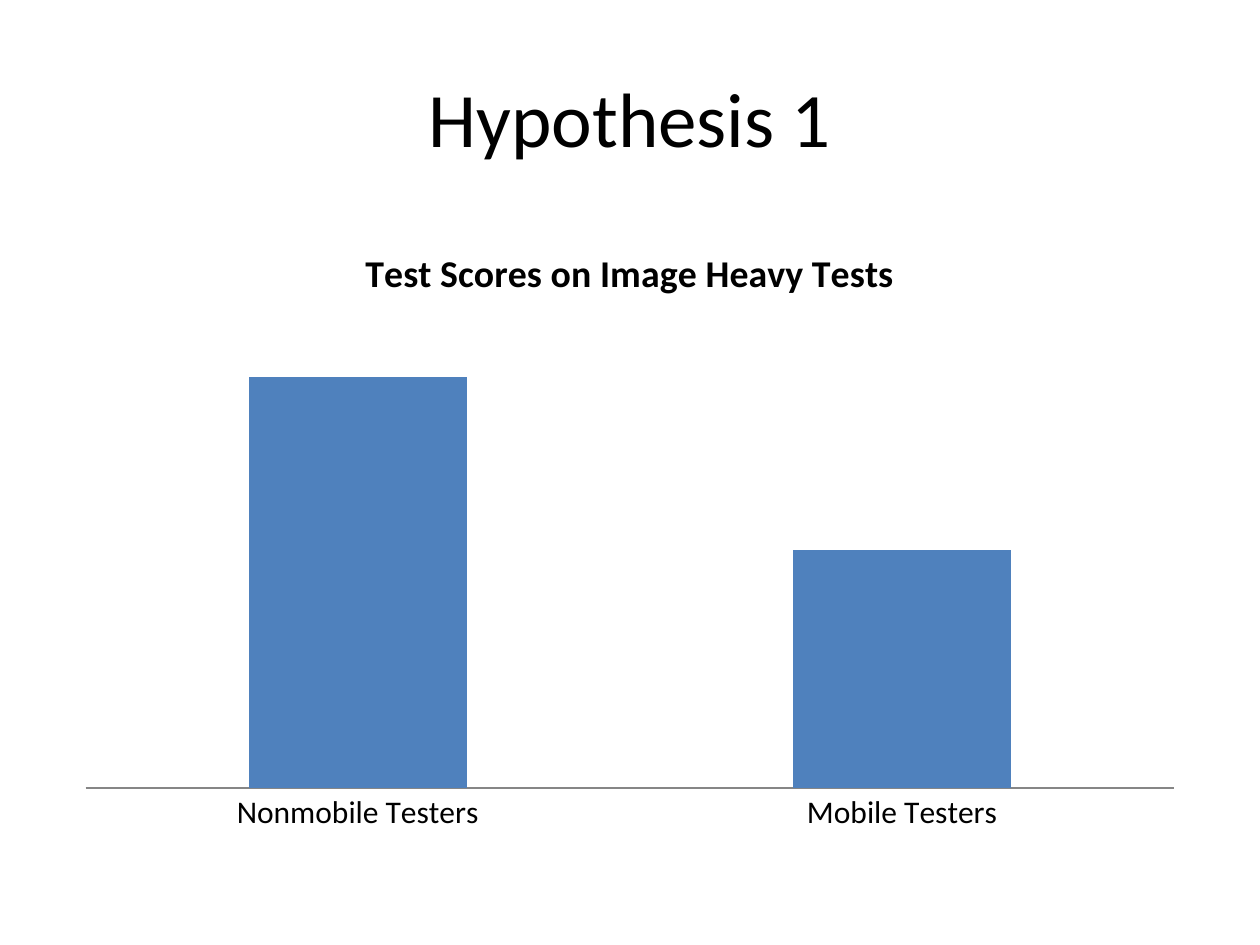
from lxml import etree
from pptx import Presentation
from pptx import util as u
from pptx.chart.data import CategoryChartData
from pptx.dml.color import RGBColor
from pptx.enum import chart as ch, text

PX = 9144  # 100 px to the inch
FONT = "Calibri"
COLORS = {"text": "000000", "bar": "4F81BD", "axis": "868686", "page": "FFFFFF"}
C_NS = "http://schemas.openxmlformats.org/drawingml/2006/chart"


def write(frame, content, size, bold=False, color="text"):
    paragraph = frame.paragraphs[0]
    paragraph.alignment = text.PP_ALIGN.CENTER
    run = paragraph.add_run()
    run.text = content
    run.font.name, run.font.size, run.font.bold = FONT, u.Pt(size), bold
    run.font.color.rgb = RGBColor.from_string(COLORS[color])


prs = Presentation()
prs.slide_width, prs.slide_height = 1000 * PX, 750 * PX
slide = prs.slides.add_slide(prs.slide_layouts[5])
slide.background.fill.solid()
slide.background.fill.fore_color.rgb = RGBColor.from_string(COLORS["page"])

# Heading
heading = slide.shapes.title
heading.left, heading.top, heading.width, heading.height = (
    n * PX for n in (50, 30, 900, 125))
heading.text_frame.vertical_anchor = text.MSO_ANCHOR.MIDDLE
write(heading.text_frame, "Hypothesis 1", size=44)

# Test scores chart
scores = CategoryChartData()
scores.categories = ["Nonmobile Testers", "Mobile Testers"]
scores.add_series("Series 1", (100, 58))
chart = slide.shapes.add_chart(
    ch.XL_CHART_TYPE.COLUMN_CLUSTERED,
    *(n * PX for n in (50, 175, 900, 495)), scores).chart
chart.has_legend = False
chart.font.name, chart.font.size = FONT, u.Pt(18)
chart.font.color.rgb = RGBColor.from_string(COLORS["text"])
write(chart.chart_title.text_frame, "Test Scores on Image Heavy Tests",
      size=21.6, bold=True)
chart.chart_title.include_in_layout = False

# Bars
bars = chart.plots[0]
bars.gap_width, bars.overlap, bars.vary_by_categories = 150, -25, False
bar_fill = bars.series[0].format.fill
bar_fill.solid()
bar_fill.fore_color.rgb = RGBColor.from_string(COLORS["bar"])

# Axes
testers = chart.category_axis
testers.major_tick_mark = testers.minor_tick_mark = ch.XL_TICK_MARK.NONE
testers.format.line.color.rgb = RGBColor.from_string(COLORS["axis"])
testers.format.line.width = u.Pt(0.75)
score_axis = chart.value_axis
score_axis.minimum_scale, score_axis.maximum_scale = 0, 120
score_axis.has_major_gridlines = False
score_axis.visible = False

# Inner plot area, as fractions of the chart
plot_area = chart.element.find(f".//{{{C_NS}}}plotArea")
for old_layout in plot_area.findall(f"{{{C_NS}}}layout"):
    plot_area.remove(old_layout)
layout = etree.Element(f"{{{C_NS}}}layout")
manual = etree.SubElement(layout, f"{{{C_NS}}}manualLayout")
for tag, value in (("layoutTarget", "inner"), ("xMode", "edge"), ("yMode", "edge"),
                   ("x", "0.02"), ("y", "0.12"), ("w", "0.96"), ("h", "0.79")):
    etree.SubElement(manual, f"{{{C_NS}}}{tag}", val=value)
plot_area.insert(0, layout)

prs.save("out.pptx")
